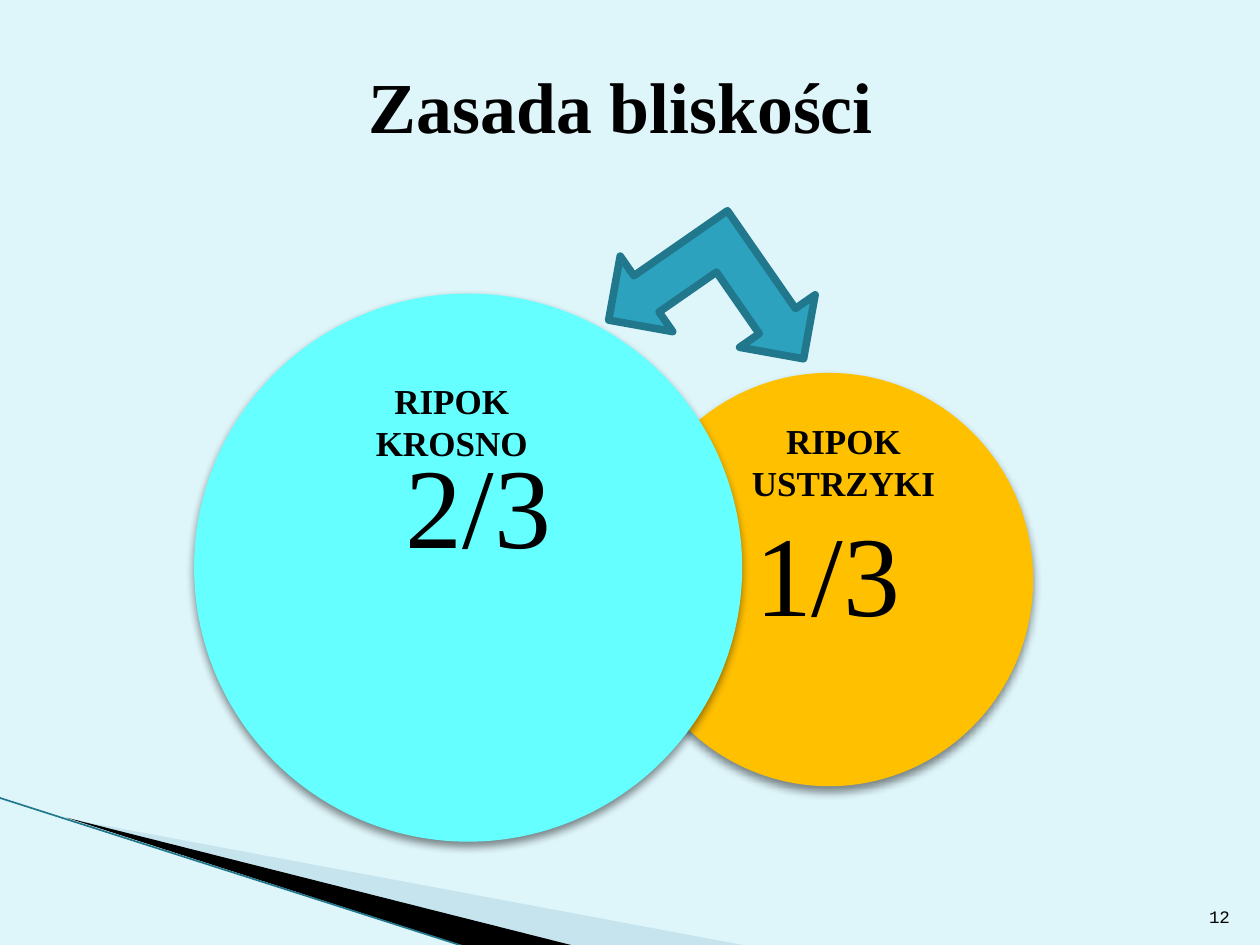
from lxml.etree import SubElement
from pptx import Presentation
from pptx.dml.color import RGBColor
from pptx.enum.shapes import MSO_CONNECTOR, MSO_SHAPE
from pptx.enum.text import MSO_ANCHOR, MSO_AUTO_SIZE, PP_ALIGN
from pptx.oxml.ns import qn
from pptx.util import Inches, Pt

SERIF = "Times New Roman"
TITLE = "Zasada bliskości"
PAGE_NUMBER = "12"

# Corner ribbons: points, colour, opacity in percent
RIBBONS = [
    ([(0.55, 6.5), (5.95, 7.51), (4.56, 7.51)], "A0CBDC", 40),
    ([(0.53, 6.49), (4.57, 7.51), (3.72, 7.52)], "000000", 100),
]
RIBBON_EDGE = (-0.01, 6.33, 3.71, 7.52)

# Circles from back to front; the share's indent and lift are its left and bottom insets
CIRCLES = [
    dict(box=(4.96, 2.96, 3.24, 3.28), color="FFC000", share="1/3",
         share_box=(5.41, 3.35, 1.87, 2.5), align=PP_ALIGN.CENTER, lift=0),
    dict(box=(1.54, 2.33, 4.35, 4.35), color="66FFFF", share="2/3",
         share_box=(2.77, 2.85, 2.51, 3.32), align=PP_ALIGN.LEFT, lift=0.9),
]
SHARE_INDENT = 0.45

PLANTS = [
    ("RIPOK KROSNO", (2.64, 2.96, 1.89, 0.77)),
    ("RIPOK \vUSTRZYKI ", (5.55, 3.28, 2.36, 0.77)),
]


def inches(values):
    return [Inches(value) for value in values]


def rgb(color):
    return RGBColor.from_string(color)


def paint(shape, color):
    """Fill a shape with one colour and drop its outline and theme shadow."""
    shape.shadow.inherit = False
    shape.fill.solid()
    shape.fill.fore_color.rgb = rgb(color)
    shape.line.fill.background()


def set_alpha(color_element, percent):
    SubElement(color_element, qn("a:alpha"), val=str(percent * 1000))


def cast_shadow(shape):
    effects = shape._element.spPr.find(qn("a:effectLst"))
    shadow = SubElement(effects, qn("a:outerShdw"), blurRad=str(Pt(5)), dist=str(Pt(3)),
                        dir="5400000", algn="ctr", rotWithShape="0")
    set_alpha(SubElement(shadow, qn("a:srgbClr"), val="000000"), 45)


def write(frame, text, size, align, font=SERIF, bold=False, anchor=MSO_ANCHOR.TOP):
    frame.word_wrap = True
    frame.vertical_anchor = anchor
    paragraph = frame.paragraphs[0]
    paragraph.text = text
    paragraph.alignment = align
    paragraph.font.name = font
    paragraph.font.size = Pt(size)
    paragraph.font.bold = bold
    paragraph.font.color.rgb = rgb("000000")
    return paragraph


def add_text(shapes, box, *args, **style):
    frame = shapes.add_textbox(*inches(box)).text_frame
    return frame, write(frame, *args, **style)


def add_ribbons(shapes):
    for points, color, opacity in RIBBONS:
        start, *rest = [inches(point) for point in points]
        builder = shapes.build_freeform(*start)
        builder.add_line_segments(rest, close=True)
        ribbon = builder.convert_to_shape()
        paint(ribbon, color)
        if opacity < 100:
            set_alpha(ribbon._element.spPr.find(".//" + qn("a:srgbClr")), opacity)
    edge = shapes.add_connector(MSO_CONNECTOR.STRAIGHT, *inches(RIBBON_EDGE))
    edge.line.color.rgb = rgb("21788D")
    edge.line.width = Pt(0.95)
    SubElement(edge._element.spPr, qn("a:effectLst"))


def add_circle(shapes, circle):
    disc = shapes.add_shape(MSO_SHAPE.OVAL, *inches(circle["box"]))
    paint(disc, circle["color"])
    cast_shadow(disc)
    frame, share = add_text(shapes, circle["share_box"], circle["share"], 65,
                            circle["align"], anchor=MSO_ANCHOR.MIDDLE)
    share.line_spacing = 0.9
    frame.margin_top = frame.margin_right = 0
    frame.margin_left = Inches(SHARE_INDENT)
    frame.margin_bottom = Inches(circle["lift"])


def add_arrow(shapes):
    arrow = shapes.add_shape(MSO_SHAPE.LEFT_UP_ARROW, *inches((4.9, 1.71, 1.5, 1.46)))
    paint(arrow, "2DA2BF")
    arrow.line.color.rgb = rgb("21788D")
    arrow.line.width = Pt(4.33)
    SubElement(arrow.line._ln, qn("a:round"))
    arrow.rotation = 235.2
    arrow.adjustments[0] = 0.24


def main():
    deck = Presentation()
    deck.slide_width, deck.slide_height = inches((10, 7.5))
    slide = deck.slides.add_slide(deck.slide_layouts[5])
    slide.background.fill.solid()
    slide.background.fill.fore_color.rgb = rgb("DEF5FA")
    shapes = slide.shapes

    title = shapes.title
    title.left, title.top, title.width, title.height = inches((0.43, 0.21, 9, 1.25))
    write(title.text_frame, TITLE, 41, PP_ALIGN.CENTER, bold=True, anchor=MSO_ANCHOR.MIDDLE)

    add_ribbons(shapes)
    for circle in CIRCLES:
        add_circle(shapes, circle)
    for plant, box in PLANTS:
        frame, _ = add_text(shapes, box, plant, 20, PP_ALIGN.CENTER, bold=True)
        frame.auto_size = MSO_AUTO_SIZE.SHAPE_TO_FIT_TEXT
    add_arrow(shapes)
    add_text(shapes, (9.46, 7.01, 0.4, 0.4), PAGE_NUMBER, 10, PP_ALIGN.RIGHT,
             font="Courier New", anchor=MSO_ANCHOR.BOTTOM)
    deck.save("out.pptx")


if __name__ == "__main__":
    main()
